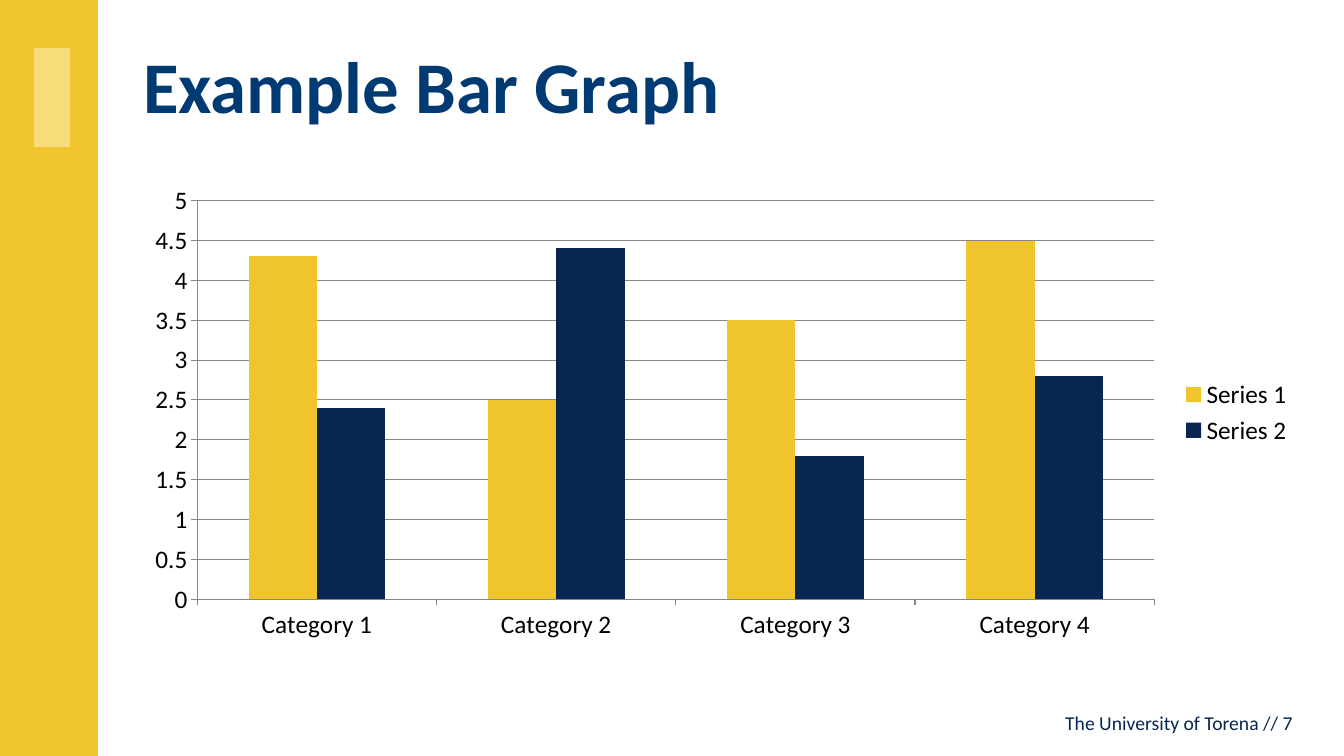
import pptx
import pptx.chart.data
import pptx.dml.color
import pptx.enum.chart
import pptx.enum.shapes
import pptx.enum.text
import pptx.util

COLORS = {
    "gold": "EFC42C",
    "pale_gold": "F8DC79",
    "navy": "082650",
    "blue": "003A72",
    "black": "000000",
    "gray": "878787",
}
FONT = "Calibri"
EMU_PER_PX = 914400 / 100.8


def px(length):
    return pptx.util.Emu(round(length * EMU_PER_PX))


def rgb(name):
    return pptx.dml.color.RGBColor.from_string(COLORS[name])


class SlideBuilder:
    """Holds the shared style and adds elements to the current slide."""

    def __init__(self, presentation):
        self.slide = presentation.slides.add_slide(presentation.slide_layouts[5])

    def style_font(self, font, size, color, bold=False):
        font.name = FONT
        font.size = pptx.util.Pt(size)
        font.bold = bold
        font.color.rgb = rgb(color)

    def rectangle(self, box, color):
        shape = self.slide.shapes.add_shape(
            pptx.enum.shapes.MSO_SHAPE.RECTANGLE, *map(px, box))
        shape.shadow.inherit = False
        shape.fill.solid()
        shape.fill.fore_color.rgb = rgb(color)
        shape.line.fill.background()

    def set_text(self, shape, text, size, color, alignment, bold=False):
        frame = shape.text_frame
        frame.text = text
        frame.word_wrap = True
        frame.auto_size = pptx.enum.text.MSO_AUTO_SIZE.NONE
        frame.vertical_anchor = pptx.enum.text.MSO_ANCHOR.MIDDLE
        paragraph = frame.paragraphs[0]
        paragraph.alignment = alignment
        self.style_font(paragraph.runs[0].font, size, color, bold)
        return paragraph

    def title(self, box, text):
        shape = self.slide.shapes.title
        shape.left, shape.top, shape.width, shape.height = map(px, box)
        paragraph = self.set_text(
            shape, text, 52, "blue", pptx.enum.text.PP_ALIGN.LEFT, bold=True)
        paragraph.line_spacing = pptx.util.Pt(60)

    def footer(self, box, text):
        shape = self.slide.shapes.add_textbox(*map(px, box))
        self.set_text(shape, text, 14, "navy", pptx.enum.text.PP_ALIGN.RIGHT)

    def column_chart(self, box, categories, series):
        data = pptx.chart.data.CategoryChartData()
        data.categories = categories
        for name, values, _ in series:
            data.add_series(name, values)
        chart = self.slide.shapes.add_chart(
            pptx.enum.chart.XL_CHART_TYPE.COLUMN_CLUSTERED,
            *map(px, box), data).chart
        self.style_font(chart.font, 18, "black")
        chart.has_title = False
        chart.has_legend = True
        chart.legend.position = pptx.enum.chart.XL_LEGEND_POSITION.RIGHT
        chart.legend.include_in_layout = False

        plot = chart.plots[0]
        plot.gap_width = 150
        plot.overlap = 0
        plot.vary_by_categories = False
        for plotted, (_, _, color) in zip(plot.series, series):
            plotted.format.fill.solid()
            plotted.format.fill.fore_color.rgb = rgb(color)

        value_axis = chart.value_axis
        value_axis.minimum_scale = 0
        value_axis.maximum_scale = 5
        value_axis.major_unit = 0.5
        value_axis.has_major_gridlines = True
        lines = [value_axis.major_gridlines.format.line]
        for axis in (chart.category_axis, value_axis):
            axis.major_tick_mark = pptx.enum.chart.XL_TICK_MARK.OUTSIDE
            lines.append(axis.format.line)
        for line in lines:
            line.color.rgb = rgb("gray")
            line.width = pptx.util.Pt(0.75)


def main():
    presentation = pptx.Presentation()
    presentation.slide_width = px(1344)
    presentation.slide_height = px(756)
    builder = SlideBuilder(presentation)
    builder.rectangle((0, 0, 98, 756), "gold")
    builder.rectangle((34, 48, 36, 99), "pale_gold")
    builder.title((133, 38, 1171, 97), "Example Bar Graph")
    builder.column_chart(
        (132, 176, 1171, 473),
        [f"Category {number}" for number in range(1, 5)],
        [
            ("Series 1", (4.3, 2.5, 3.5, 4.5), "gold"),
            ("Series 2", (2.4, 4.4, 1.8, 2.8), "navy"),
        ],
    )
    builder.footer((812, 703, 491, 40), "The University of Torena // 7")
    presentation.save("out.pptx")


if __name__ == "__main__":
    main()
